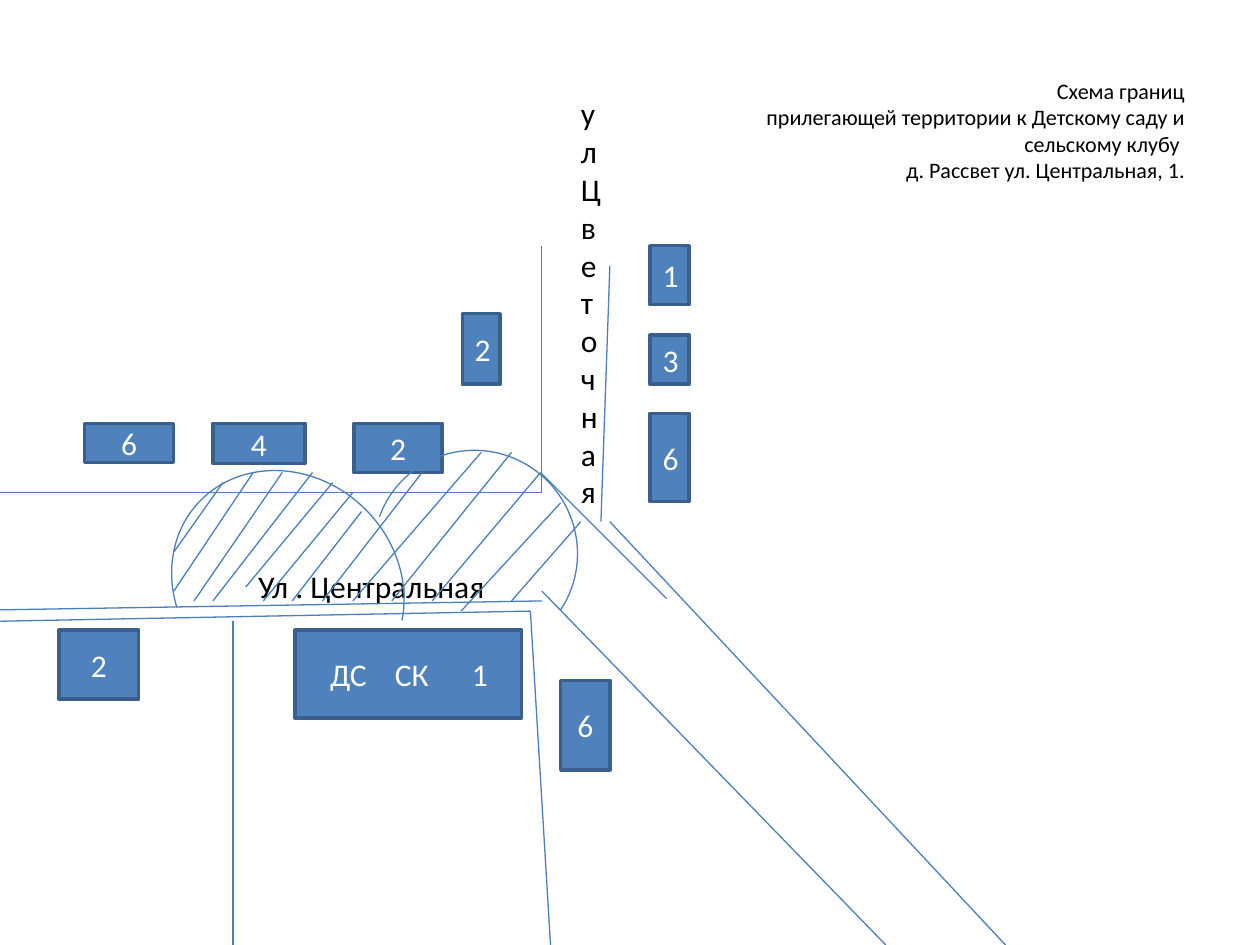
from typing import NamedTuple

from lxml.etree import SubElement
from pptx import Presentation
from pptx.dml.color import RGBColor
from pptx.enum.shapes import MSO_CONNECTOR, MSO_SHAPE
from pptx.enum.text import MSO_ANCHOR as Anchor, PP_ALIGN as Align
from pptx.oxml.ns import qn
from pptx.util import Pt

BLACK = RGBColor(0x00, 0x00, 0x00)
WHITE = RGBColor(0xFF, 0xFF, 0xFF)
HOUSE_FILL = RGBColor(0x4F, 0x81, 0xBD)
HOUSE_EDGE = RGBColor(0x3A, 0x5F, 0x8C)
LINE_BLUE = RGBColor(0x4B, 0x7E, 0xBC)
FONT = "Calibri"
TITLE_SIZE, LABEL_SIZE = 12.6, 18


class Segment(NamedTuple):
    x1: float
    y1: float
    x2: float
    y2: float


class Frame(NamedTuple):
    left: float
    top: float
    width: float
    height: float


class House(NamedTuple):
    label: str
    frame: Frame


class Arc(NamedTuple):
    frame: Frame
    rotation: float
    start: float
    end: float


TITLE_LINES = (
    "Схема границ",
    "прилегающей территории к Детскому саду и",
    "сельскому клубу ",
    "д. Рассвет ул. Центральная, 1.",
)

ROADS = (
    Segment(0, 281.5, 309.6, 281.5),
    Segment(0, 348.5, 309.6, 343.4),
    Segment(309.6, 337.7, 506.2, 540),
    Segment(309.6, 281.5, 309.6, 140.4),
    Segment(348.5, 151.9, 343.4, 298.1),
    Segment(348.5, 298.1, 574.6, 540),
    Segment(308.9, 270, 380.9, 342),
)

PLOT_BORDERS = (
    Segment(0, 355, 303.1, 349.2),
    Segment(303.1, 349.2, 314.6, 540),
    Segment(133.2, 355, 133.2, 540),
)

HATCHING = (
    Segment(331.9, 298.1, 292.3, 343.4),
    Segment(320.4, 287.3, 263.5, 349.2),
    Segment(308.9, 270, 247, 343.4),
    Segment(292.3, 258.5, 223.9, 343.4),
    Segment(275, 258.5, 201.6, 343.4),
    Segment(241.2, 270, 184.3, 343.4),
    Segment(206.6, 292.3, 167, 343.4),
    Segment(201.6, 281.5, 150.5, 343.4),
    Segment(190.1, 275.8, 140.4, 335.5),
    Segment(178.6, 270, 121.7, 343.4),
    Segment(161.3, 270, 110.9, 343.4),
    Segment(144.7, 270, 99.4, 337.7),
    Segment(127.4, 275.8, 99.4, 315.4),
)

HOUSES = (
    House("6", Frame(48.2, 241.9, 51.1, 22.3)),
    House("4", Frame(121.7, 241.9, 52.6, 23)),
    House("2", Frame(202.3, 241.9, 50.4, 28.1)),
    House("2", Frame(264.2, 179.3, 21.6, 40.3)),
    House("1", Frame(371.5, 140.4, 22.3, 33.8)),
    House("3", Frame(371.5, 191.5, 22.3, 28.1)),
    House("6", Frame(371.5, 236.2, 22.3, 50.4)),
    House("2", Frame(33.8, 360, 45.4, 39.6)),
    House("6", Frame(320.4, 388.8, 28.1, 51.1)),
)
KINDERGARTEN = House("ДС\tСК\t1", Frame(168.5, 360, 129.6, 50.4))
KINDERGARTEN_TABS = (37, 81)

ARCS = (
    Arc(Frame(102.2, 265, 124.6, 139.7), 313.3, 129.474, 38.071),
    Arc(Frame(213.8, 257, 115.9, 117.4), 318.7, 144.965, 45.245),
)


def add_span(para, text: str, size: float, color: RGBColor) -> None:
    span = para.add_run()
    span.text = text
    span.font.name = FONT
    span.font.size = Pt(size)
    span.font.color.rgb = color


def add_segment(page, segment: Segment) -> None:
    line = page.shapes.add_connector(MSO_CONNECTOR.STRAIGHT, *map(Pt, segment))
    line.line.color.rgb = LINE_BLUE
    line.line.width = Pt(0.75)
    SubElement(line._element.spPr, qn("a:effectLst"))


def add_house(page, house: House):
    box = page.shapes.add_shape(MSO_SHAPE.RECTANGLE, *map(Pt, house.frame))
    box.shadow.inherit = False
    box.fill.solid()
    box.fill.fore_color.rgb = HOUSE_FILL
    box.line.color.rgb = HOUSE_EDGE
    box.line.width = Pt(2)
    box.text_frame.vertical_anchor = Anchor.MIDDLE
    para = box.text_frame.paragraphs[0]
    para.alignment = Align.CENTER
    add_span(para, house.label, LABEL_SIZE, WHITE)
    return box


def add_kindergarten(page) -> None:
    """Draw the shared building, its three labels set on tab stops."""
    box = add_house(page, KINDERGARTEN)
    box.text_frame.margin_left = Pt(20.2)
    para = box.text_frame.paragraphs[0]
    para.alignment = Align.LEFT
    stops = SubElement(para._p.get_or_add_pPr(), qn("a:tabLst"))
    for position in KINDERGARTEN_TABS:
        SubElement(stops, qn("a:tab"), pos=str(Pt(position)), algn="l")


def add_arc(page, arc: Arc) -> None:
    shape = page.shapes.add_shape(MSO_SHAPE.ARC, *map(Pt, arc.frame))
    shape.shadow.inherit = False
    shape.rotation = arc.rotation
    shape.adjustments[0] = arc.start
    shape.adjustments[1] = arc.end
    shape.fill.background()
    shape.line.color.rgb = LINE_BLUE
    shape.line.width = Pt(0.75)


def add_street_name(page, text: str, frame: Frame, wrap: bool):
    box = page.shapes.add_textbox(*map(Pt, frame))
    box.text_frame.word_wrap = wrap
    add_span(box.text_frame.paragraphs[0], text, LABEL_SIZE, BLACK)
    return box


def add_title(page) -> None:
    box = page.shapes.add_textbox(Pt(36), Pt(21.6), Pt(648), Pt(90))
    box.text_frame.word_wrap = True
    box.text_frame.vertical_anchor = Anchor.MIDDLE
    box.text_frame.margin_top = Pt(19)
    para = box.text_frame.paragraphs[0]
    para.alignment = Align.RIGHT
    for index, text in enumerate(TITLE_LINES):
        if index:
            para.add_line_break()
        add_span(para, text, TITLE_SIZE, BLACK)


def main() -> None:
    deck = Presentation()
    deck.slide_width, deck.slide_height = Pt(720), Pt(540)
    page = deck.slides.add_slide(deck.slide_layouts[6])
    add_title(page)
    for segment in ROADS + PLOT_BORDERS:
        add_segment(page, segment)
    for house in HOUSES:
        add_house(page, house)
    add_kindergarten(page)
    add_street_name(page, "Ул . Центральная", Frame(140.4, 320.4, 145.4, 28.8), wrap=False)
    column = add_street_name(page, "улЦветочная", Frame(331.9, 50.4, 5.8, 247), wrap=True)
    column.text_frame.margin_left = column.text_frame.margin_right = 0
    for arc in ARCS:
        add_arc(page, arc)
    for segment in HATCHING:
        add_segment(page, segment)
    deck.save("out.pptx")


if __name__ == "__main__":
    main()
